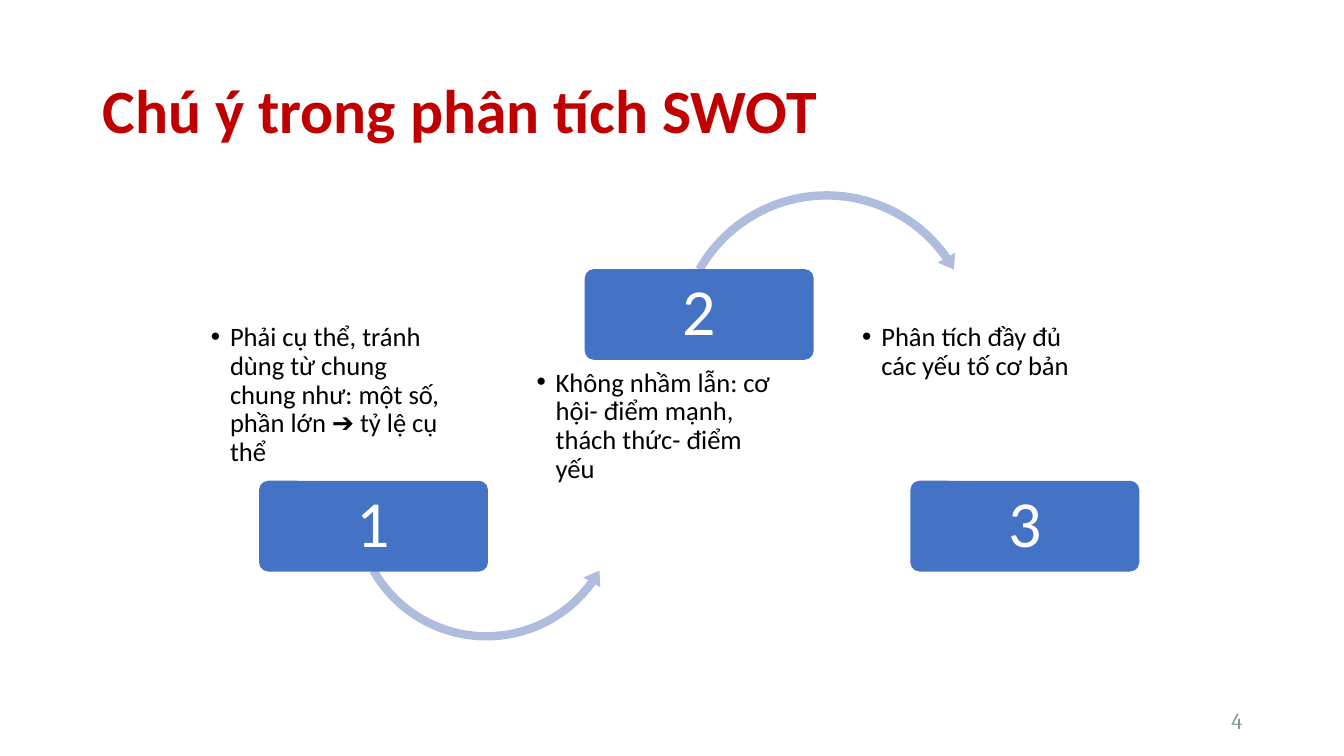
from lxml import etree
from pptx import Presentation
from pptx import util as u
from pptx.dml.color import RGBColor
from pptx.enum import shapes, text
from pptx.oxml.ns import qn

PX = 9144
HUE = {"title": "C00000", "bar": "4472C4", "arc": "B0BCDE", "pane": "FFFFFF",
       "body": "000000", "digit": "FFFFFF", "page": "7B9899"}
KIND = shapes.MSO_SHAPE
MID = text.MSO_ANCHOR.MIDDLE
TOP = text.MSO_ANCHOR.TOP
ALIGN = text.PP_ALIGN
STYLE = {
    "title": {"size": 44, "name": "Calibri", "bold": True},
    "body": {"size": 19, "name": "Calibri"},
    "digit": {"size": 47, "name": "Calibri"},
    "page": {"size": 16, "name": "Cambria"},
}
STEPS = [
    "Phải cụ thể, tránh dùng từ chung chung như: một số, phần lớn ➔ tỷ lệ cụ thể",
    "Không nhầm lẫn: cơ hội- điểm mạnh, thách thức- điểm yếu",
    "Phân tích đầy đủ các yếu tố cơ bản",
]
ARCS = [
    (KIND.LEFT_CIRCULAR_ARROW, (144, 52, 277), (3, 3.5), (6.18, 35.77, 150.41)),
    (KIND.CIRCULAR_ARROW, (142, -128, 310), (2.7, 3.2), (5.49, 324.92, 209.59)),
]


def emu(*box):
    return [u.Emu(n * PX) for n in box]


def write(shape, words, style, align, anchor, inset, gap=0.9):
    frame = shape.text_frame
    left, top, right, low = emu(*inset)
    form = {"word_wrap": True, "vertical_anchor": anchor, "margin_left": left,
            "margin_top": top, "margin_right": right, "margin_bottom": low}
    for key, val in form.items():
        setattr(frame, key, val)
    para = frame.paragraphs[0]
    para.alignment = align
    para.line_spacing = gap
    run = para.add_run()
    run.text = words
    for key, val in STYLE[style].items():
        setattr(run.font, key, u.Pt(val) if key == "size" else val)
    run.font.color.rgb = RGBColor.from_string(HUE[style])
    return para


def bullet(para, hang):
    props = para._p.get_or_add_pPr()
    props.set("marL", str(hang * PX))
    props.set("indent", str(-hang * PX))
    font = etree.SubElement(props, qn("a:buFont"))
    font.set("typeface", "Arial")
    mark = etree.SubElement(props, qn("a:buChar"))
    mark.set("char", "•")


def solid(slide, kind, box, hue, adj):
    shape = slide.shapes.add_shape(kind, *emu(*box))
    shape.shadow.inherit = False
    shape.fill.solid()
    shape.fill.fore_color.rgb = RGBColor.from_string(HUE[hue])
    shape.line.fill.background()
    for i, val in enumerate(adj):
        shape.adjustments[i] = val
    return shape


def label(slide, box, words, style, align, gap):
    area = slide.shapes.add_textbox(*emu(*box))
    write(area, words, style, align, MID, (10, 5, 10, 5), gap)


def arc(slide, x, y, form):
    kind, (dx, dy, size), (width, head), angles = form
    turns = [deg * 0.6 for deg in angles]
    adj = [width / 100, *turns, head / 100]
    solid(slide, kind, (x + dx, y + dy, size, size), "arc", adj)


def step(slide, box, num, words, form):
    x, y, wide, high = box
    even = num % 2 == 0
    pane = solid(slide, KIND.ROUNDED_RECTANGLE, box, "pane", [0.1])
    inset = (3, 48 if even else 3, 3, 3)
    bullet(write(pane, words, "body", ALIGN.LEFT, TOP, inset), 19)
    if form:
        arc(slide, x, y, form)
    drop = -45 if even else high - 45
    bar = solid(slide, KIND.ROUNDED_RECTANGLE,
                (x + 57, y + drop, 227, 90), "bar", [0.1])
    write(bar, str(num), "digit", ALIGN.CENTER, MID, (10, 7, 10, 7))


def flow(slide, box):
    x, y, wide, high = box
    for i, words in enumerate(STEPS):
        form = ARCS[i] if i < len(ARCS) else None
        step(slide, (x + i * 323, y, 255, high), i + 1, words, form)


def main():
    deck = Presentation()
    deck.slide_width, deck.slide_height = emu(1333, 750)
    slide = deck.slides.add_slide(deck.slide_layouts[6])
    label(slide, (92, 40, 1150, 145), "Chú ý trong phân tích SWOT",
          "title", ALIGN.LEFT, 0.9)
    flow(slide, (200, 312, 901, 210))
    label(slide, (942, 695, 300, 40), "4", "page", ALIGN.RIGHT, 1.0)
    deck.save("out.pptx")


if __name__ == "__main__":
    main()
